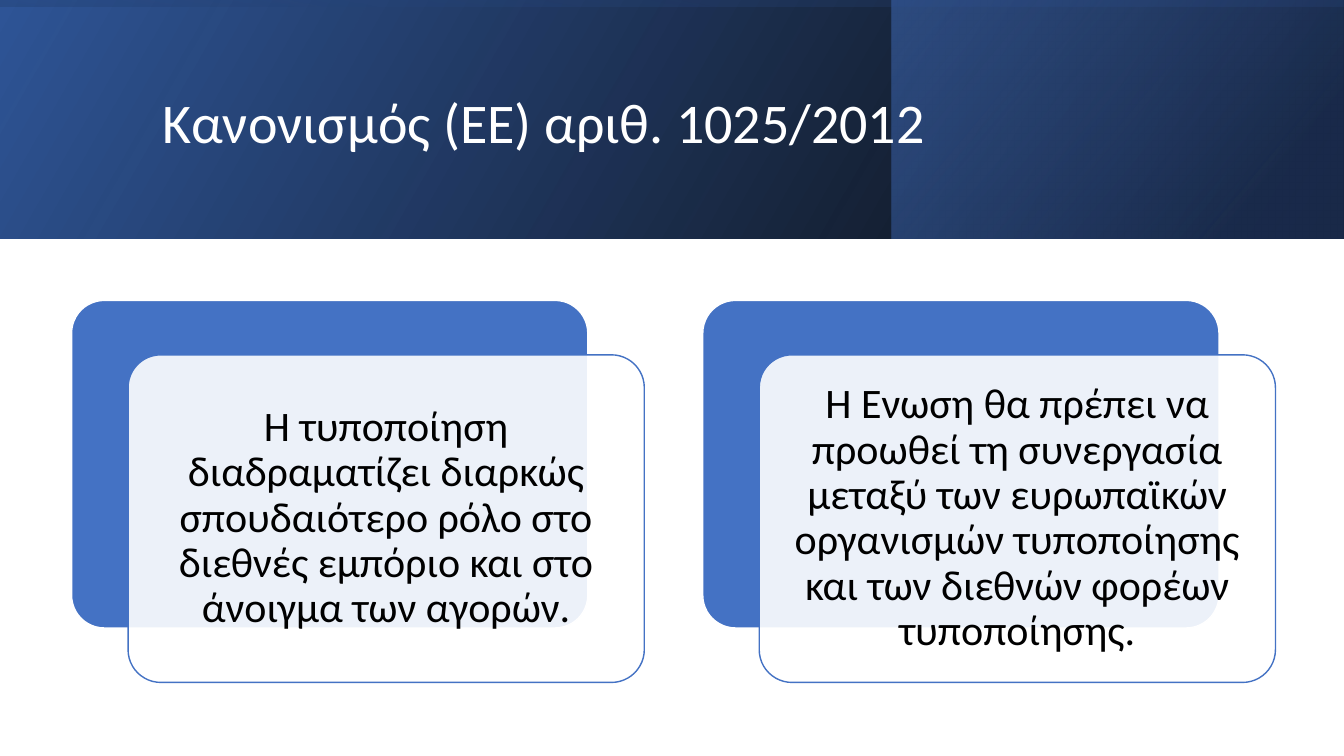
from lxml.etree import SubElement
from pptx import Presentation
from pptx.dml.color import RGBColor
from pptx.enum.shapes import MSO_SHAPE
from pptx.enum.text import MSO_ANCHOR, PP_ALIGN
from pptx.oxml.ns import qn
from pptx.util import Inches, Pt

WHITE = RGBColor(0xFF, 0xFF, 0xFF)
BLACK = RGBColor(0x00, 0x00, 0x00)
BLUE = RGBColor(0x44, 0x72, 0xC4)
DEEP_BLUE = RGBColor(0x2F, 0x55, 0x97)
NAVY = RGBColor(0x20, 0x38, 0x64)

FONT = "Calibri"
BANNER_HEIGHT = 2.37
CARD_WIDTH, CARD_HEIGHT = 5.12, 3.25
CARD_LEFT, CARD_TOP, CARD_STEP = 0.71, 2.98, 6.26
FRONT_SHIFT_X, FRONT_SHIFT_Y = 0.56, 0.54

TITLE = "Κανονισμός (ΕΕ) αριθ. 1025/2012"
STATEMENTS = (
    "Η τυποποίηση διαδραματίζει διαρκώς σπουδαιότερο ρόλο στο διεθνές "
    "εμπόριο και στο άνοιγμα των αγορών.",
    "Η Ένωση θα πρέπει να προωθεί τη συνεργασία μεταξύ των ευρωπαϊκών "
    "οργανισμών τυποποίησης και των διεθνών φορέων τυποποίησης.",
)


def add_alpha(color_element, percent):
    SubElement(color_element, qn("a:alpha"), val=str(percent * 1000))


def add_gradient_panel(page, left, top, width, height, stops, angle, rotation=0):
    """Add a mirrored panel; stops are (position, colour, opacity) in percent."""
    panel = page.shapes.add_shape(
        MSO_SHAPE.RECTANGLE, Inches(left), Inches(top), Inches(width), Inches(height))
    panel.shadow.inherit = False
    panel.line.fill.background()
    panel.rotation = rotation
    properties = panel._element.spPr
    properties.find(qn("a:xfrm")).set("flipH", "1")

    gradient = SubElement(properties, qn("a:gradFill"), rotWithShape="1")
    properties.find(qn("a:prstGeom")).addnext(gradient)
    stop_list = SubElement(gradient, qn("a:gsLst"))
    for position, color, opacity in stops:
        stop = SubElement(stop_list, qn("a:gs"), pos=str(position * 1000))
        add_alpha(SubElement(stop, qn("a:srgbClr"), val=str(color)), opacity)
    SubElement(gradient, qn("a:lin"), ang=str(angle * 60000), scaled="0")


def write_text(shape, text, size, color, alignment):
    frame = shape.text_frame
    frame.word_wrap = True
    frame.vertical_anchor = MSO_ANCHOR.MIDDLE
    para = frame.paragraphs[0]
    para.text = text
    para.alignment = alignment
    para.line_spacing = 0.9
    para.font.name = FONT
    para.font.size = Pt(size)
    para.font.color.rgb = color


def add_title(page):
    box = page.shapes.add_textbox(
        Inches(1.51), Inches(0.38), Inches(10.63), Inches(1.72))
    write_text(box, TITLE, 40, WHITE, PP_ALIGN.LEFT)


def add_rounded_panel(page, left, top, fill_color, line_color):
    panel = page.shapes.add_shape(
        MSO_SHAPE.ROUNDED_RECTANGLE,
        Inches(left), Inches(top), Inches(CARD_WIDTH), Inches(CARD_HEIGHT))
    panel.adjustments[0] = 0.1
    panel.shadow.inherit = False
    panel.fill.solid()
    panel.fill.fore_color.rgb = fill_color
    panel.line.color.rgb = line_color
    panel.line.width = Pt(1)
    return panel


def add_card(page, left, text):
    """Add a blue panel with a translucent text panel shifted over it."""
    add_rounded_panel(page, left, CARD_TOP, BLUE, WHITE)
    front = add_rounded_panel(
        page, left + FRONT_SHIFT_X, CARD_TOP + FRONT_SHIFT_Y, WHITE, BLUE)
    add_alpha(front._element.spPr.find(qn("a:solidFill"))[0], 90)
    frame = front.text_frame
    frame.margin_left = frame.margin_right = Inches(0.12)
    frame.margin_top = frame.margin_bottom = Inches(0.12)
    write_text(front, text, 30, BLACK, PP_ALIGN.CENTER)


def main():
    deck = Presentation()
    deck.slide_width = Inches(13.33)
    deck.slide_height = Inches(7.5)
    page = deck.slides.add_slide(deck.slide_layouts[6])

    add_gradient_panel(page, 0, 0, 13.33, BANNER_HEIGHT,
                       [(0, BLACK, 96), (100, DEEP_BLUE, 100)], 330)
    add_gradient_panel(page, 8.84, 0, 4.48, BANNER_HEIGHT,
                       [(19, NAVY, 68), (100, BLUE, 48)], 320)
    add_gradient_panel(page, 5.48, -5.48, BANNER_HEIGHT, 13.33,
                       [(23, DEEP_BLUE, 16), (99, BLACK, 45)], 350, rotation=270)
    add_title(page)
    for index, statement in enumerate(STATEMENTS):
        add_card(page, CARD_LEFT + index * CARD_STEP, statement)

    deck.save("out.pptx")


if __name__ == "__main__":
    main()
